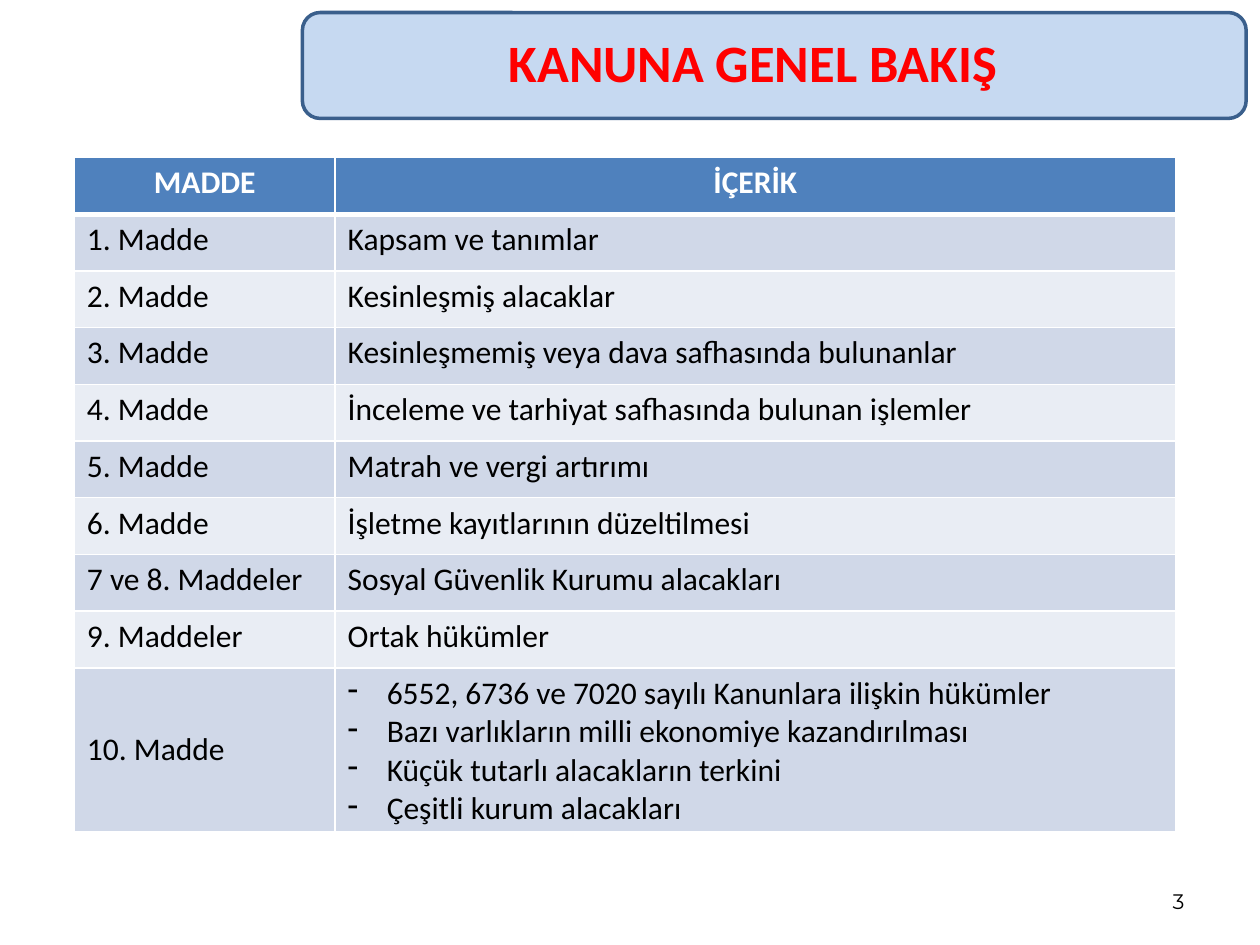
"""Builds the slide that outlines the articles of the law."""
from lxml.etree import SubElement
from pptx import Presentation
from pptx.dml.color import RGBColor
from pptx.enum.shapes import MSO_SHAPE as Shape
from pptx.enum.text import MSO_ANCHOR as Anchor, PP_ALIGN as Align
from pptx.oxml.ns import qn
from pptx.util import Inches, Pt

TITLE = "KANUNA GENEL BAKIŞ "
PAGE_NUMBER = "3"
HEADER = ("MADDE", "İÇERİK")
ARTICLES = [
    ("1. Madde", "Kapsam ve tanımlar"),
    ("2. Madde", "Kesinleşmiş alacaklar"),
    ("3. Madde", "Kesinleşmemiş veya dava safhasında bulunanlar"),
    ("4. Madde", "İnceleme ve tarhiyat safhasında bulunan işlemler"),
    ("5. Madde", "Matrah ve vergi artırımı"),
    ("6. Madde", "İşletme kayıtlarının düzeltilmesi"),
    ("7 ve 8. Maddeler", "Sosyal Güvenlik Kurumu alacakları"),
    ("9. Maddeler", "Ortak hükümler"),
    ("10. Madde", [
        "6552, 6736 ve 7020 sayılı Kanunlara ilişkin hükümler ",
        "Bazı varlıkların milli ekonomiye kazandırılması",
        "Küçük tutarlı alacakların terkini",
        "Çeşitli kurum alacakları ",
    ]),
]
COLUMN_WIDTHS = (2.07, 6.67)
ROW_HEIGHT, LAST_ROW_HEIGHT = 0.45, 1.24
BULLET_INDENT = 0.31

THEME = {
    "font": "Calibri", "number_font": "Montserrat",
    "title_size": 30, "table_size": 18, "number_size": 12,
    "title": "FF0000", "text": "000000", "white": "FFFFFF",
    "banner": "C6D9F1", "banner_line": "3A5F8C",
    "header": "4F81BD", "bands": ("D0D8E8", "E9EDF4"),
}


def color(name):
    return RGBColor.from_string(name)


def write(frame, text, size=THEME["table_size"], ink=THEME["text"],
          font=THEME["font"], bold=False, align=Align.LEFT, bullet=None):
    lines = [text] if isinstance(text, str) else text
    for index, line in enumerate(lines):
        paragraph = frame.add_paragraph() if index else frame.paragraphs[0]
        paragraph.alignment = align
        if bullet:
            properties = paragraph._p.get_or_add_pPr()
            properties.set("marL", str(Inches(BULLET_INDENT)))
            properties.set("indent", str(-Inches(BULLET_INDENT)))
            SubElement(properties, qn("a:buFontTx"))
            SubElement(properties, qn("a:buChar"), char=bullet)
        run = paragraph.add_run()
        run.text = line
        run.font.name, run.font.size, run.font.bold = font, Pt(size), bold
        run.font.color.rgb = color(ink)


def add_text_box(slide, bounds, text, **style):
    frame = slide.shapes.add_textbox(*map(Inches, bounds)).text_frame
    frame.word_wrap = True
    frame.vertical_anchor = Anchor.MIDDLE
    write(frame, text, **style)


def add_banner(slide):
    banner = slide.shapes.add_shape(
        Shape.ROUNDED_RECTANGLE, *map(Inches, (2.4, 0.1, 7.49, 0.84)))
    banner.shadow.inherit = False
    banner.fill.solid()
    banner.fill.fore_color.rgb = color(THEME["banner"])
    banner.line.color.rgb = color(THEME["banner_line"])
    banner.line.width = Pt(2)


def style_cell(cell, fill, top, bottom):
    properties = cell._tc.get_or_add_tcPr()
    for side, width in (("L", 1), ("R", 1), ("T", top), ("B", bottom)):
        line = SubElement(properties, qn(f"a:ln{side}"), w=str(Pt(width)))
        SubElement(SubElement(line, qn("a:solidFill")), qn("a:srgbClr"),
                   val=THEME["white"])
    cell.fill.solid()
    cell.fill.fore_color.rgb = color(fill)


def add_article_table(slide):
    rows = [HEADER, *ARTICLES]
    heights = [ROW_HEIGHT] * len(ARTICLES) + [LAST_ROW_HEIGHT]
    bounds = (0.59, 1.25, sum(COLUMN_WIDTHS), sum(heights))
    table = slide.shapes.add_table(
        len(rows), len(HEADER), *map(Inches, bounds)).table
    for column, width in zip(table.columns, COLUMN_WIDTHS):
        column.width = Inches(width)
    for index, (row, height, values) in enumerate(zip(table.rows, heights, rows)):
        row.height = Inches(height)
        fill = THEME["bands"][(index - 1) % 2] if index else THEME["header"]
        for cell, value in zip(row.cells, values):
            style_cell(cell, fill, 3 if index == 1 else 1, 1 if index else 3)
            if not index:
                write(cell.text_frame, value, ink=THEME["white"], bold=True,
                      align=Align.CENTER)
            elif isinstance(value, list):
                write(cell.text_frame, value, align=Align.JUSTIFY, bullet="-")
            else:
                write(cell.text_frame, value)
    table.cell(len(rows) - 1, 0).vertical_anchor = Anchor.MIDDLE


def main():
    presentation = Presentation()
    presentation.slide_width, presentation.slide_height = Inches(10), Inches(7.5)
    slide = presentation.slides.add_slide(presentation.slide_layouts[6])
    add_banner(slide)
    add_text_box(slide, (2.64, 0.21, 6.77, 0.55), TITLE, ink=THEME["title"],
                 size=THEME["title_size"], bold=True, align=Align.CENTER)
    add_text_box(slide, (7.17, 6.95, 2.33, 0.4), PAGE_NUMBER, align=Align.RIGHT,
                 size=THEME["number_size"], font=THEME["number_font"])
    add_article_table(slide)
    presentation.save("out.pptx")


if __name__ == "__main__":
    main()
